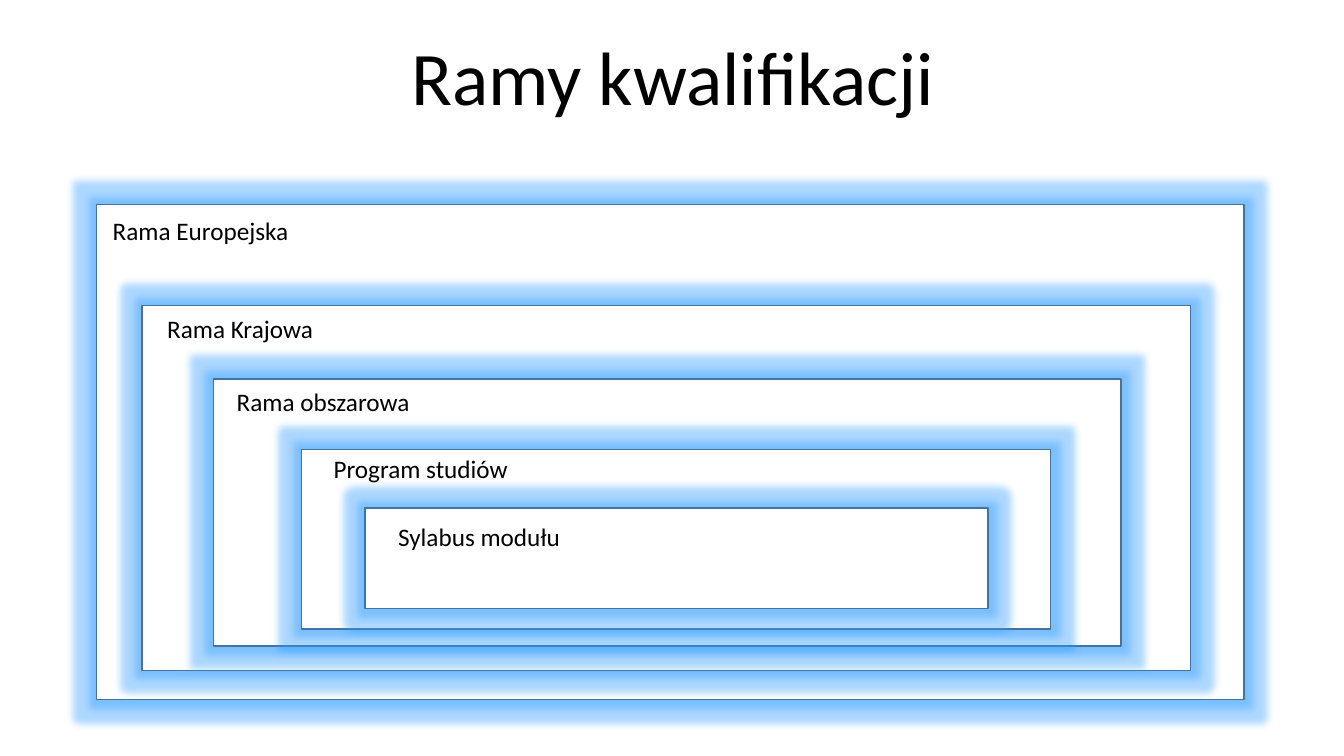
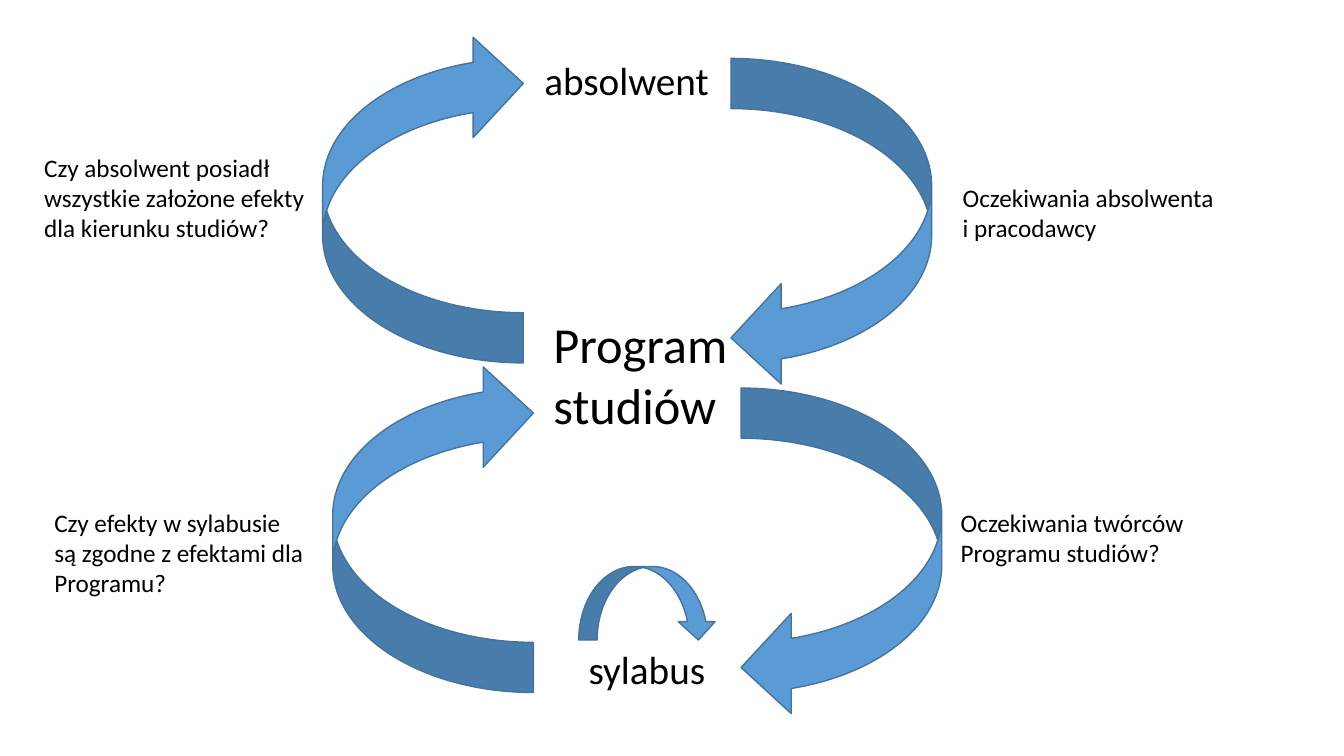
from lxml.etree import SubElement
from pptx import Presentation
from pptx.dml.color import RGBColor as RGB
from pptx.enum.shapes import MSO_SHAPE as SHAPE
from pptx.enum.text import MSO_AUTO_SIZE as FIT
from pptx.oxml.ns import qn
from pptx.util import Pt

PX = 9144
FONT = "Calibri"
COLORS = {
    "ink": "000000",
    "paper": "FFFFFF",
    "blue": "5B9BD5",
    "edge": "43739E",
    "glow": "319CFF",
}


def add_text(slide, left, top, width, height, lines, size=18):
    box = slide.shapes.add_textbox(left * PX, top * PX, width * PX, height * PX)
    frame = box.text_frame
    frame.word_wrap = False
    frame.auto_size = FIT.SHAPE_TO_FIT_TEXT
    frame.text = lines
    for para in frame.paragraphs:
        para.font.name = FONT
        para.font.size = Pt(size)
        para.font.color.rgb = RGB.from_string(COLORS["ink"])


def add_shape(slide, kind, left, top, width, height, fill, turn=0):
    shape = slide.shapes.add_shape(kind, left * PX, top * PX, width * PX, height * PX)
    shape.shadow.inherit = False
    shape.rotation = turn
    shape.fill.solid()
    shape.fill.fore_color.rgb = RGB.from_string(COLORS[fill])
    shape.line.color.rgb = RGB.from_string(COLORS["edge"])
    shape.line.width = Pt(1)
    return shape


deck = Presentation()
deck.slide_width = 1333 * PX
deck.slide_height = 750 * PX
blank = deck.slide_layouts[6]

slide = deck.slides.add_slide(blank)
frames = [
    (96, 203, 1138, 491),
    (141, 303, 1040, 362),
    (212, 376, 900, 265),
    (299, 446, 743, 178),
    (362, 504, 618, 100),
]
for place in frames:
    frame = add_shape(slide, SHAPE.RECTANGLE, *place, "paper")
    effects = frame._element.spPr.find(qn("a:effectLst"))
    glow = SubElement(effects, qn("a:glow"), rad=str(15 * PX))
    color = SubElement(glow, qn("a:srgbClr"), val=COLORS["glow"])
    SubElement(color, qn("a:alpha"), val="40000")

labels = [
    (102, 209, 196, "Rama Europejska"),
    (156, 306, 166, "Rama Krajowa"),
    (225, 378, 193, "Rama obszarowa"),
    (321, 445, 195, "Program studiów"),
    (385, 512, 183, "Sylabus modułu"),
]
for left, top, width, label in labels:
    add_text(slide, left, top, width, 40, label)
add_text(slide, 398, 25, 544, 101, "Ramy kwalifikacji", 54)

slide = deck.slides.add_slide(blank)
for left, top in [(266, 424), (256, 97)]:
    for across, down, turn in [(0, 0, 270), (405, 25, 90)]:
        add_shape(slide, SHAPE.CURVED_DOWN_ARROW, left + across, top + down,
                  327, 199, "blue", turn)
add_shape(slide, SHAPE.CURVED_DOWN_ARROW, 574, 562, 137, 73, "blue")

stages = [
    (530, 51, 185, 57, "absolwent", 28),
    (539, 306, 206, 131, "Program\nstudiów", 36),
    (574, 635, 137, 57, "sylabus", 28),
]
for stage in stages:
    add_text(slide, *stage)

notes = [
    (34, 146, 287, 101,
     "Czy absolwent posiadł\nwszystkie założone efekty\ndla kierunku studiów?"),
    (945, 176, 277, 71, "Oczekiwania absolwenta\ni pracodawcy"),
    (44, 498, 270, 101,
     "Czy efekty w sylabusie\nsą zgodne z efektami dla\nProgramu?"),
    (943, 498, 249, 101, "Oczekiwania twórców\nProgramu studiów?"),
]
for note in notes:
    add_text(slide, *note)

deck.save("out.pptx")
